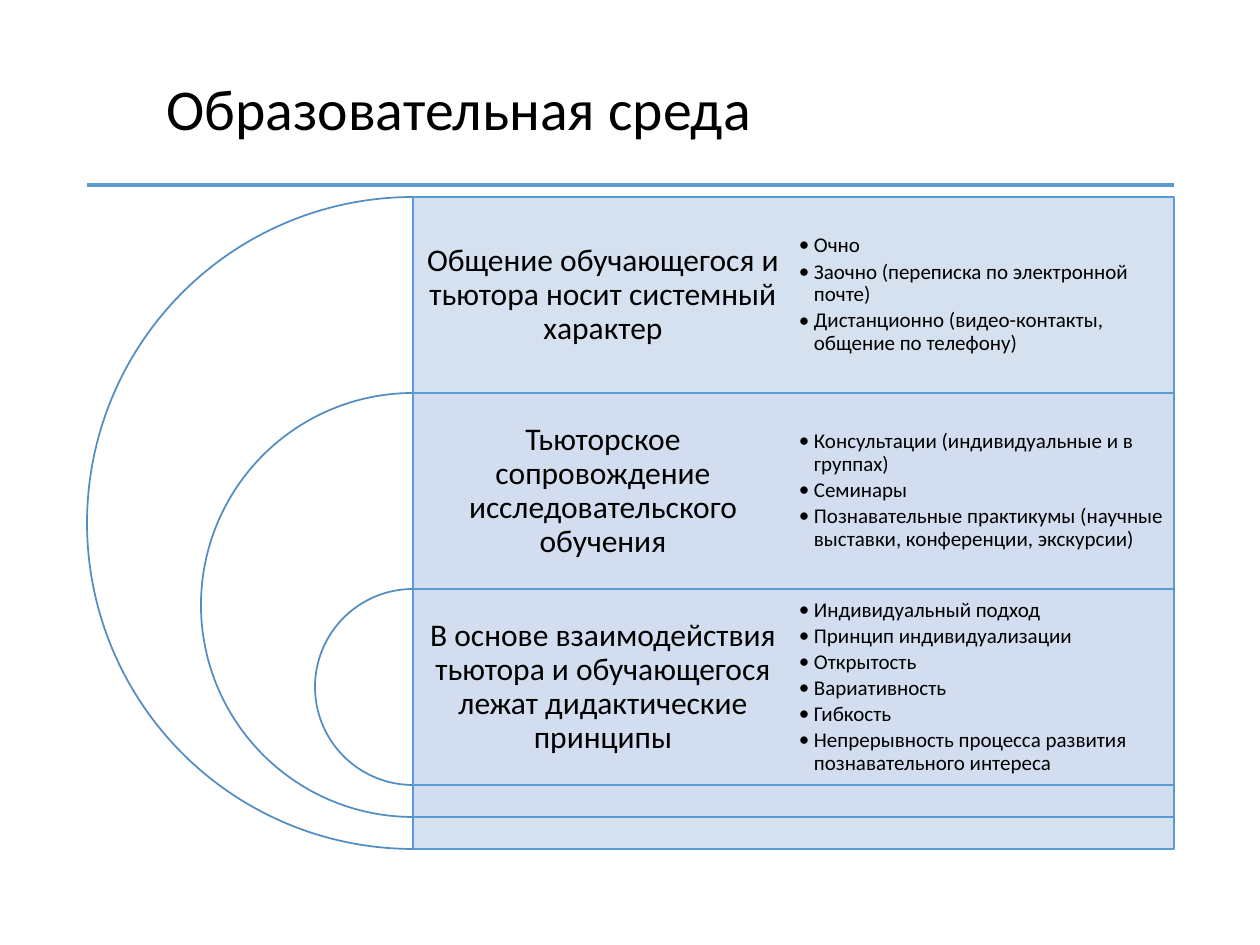
from lxml.etree import SubElement
from pptx import Presentation
from pptx.dml.color import RGBColor
from pptx.enum.shapes import MSO_CONNECTOR, MSO_SHAPE
from pptx.enum.text import MSO_ANCHOR, MSO_AUTO_SIZE, PP_ALIGN
from pptx.oxml.ns import qn
from pptx.util import Pt

PX = 914400 / 126
BLACK = RGBColor(0x00, 0x00, 0x00)
WHITE = RGBColor(0xFF, 0xFF, 0xFF)
BLUE = RGBColor(0x5B, 0x9B, 0xD5)
RIM = RGBColor(0x53, 0x8D, 0xC1)
PALE = RGBColor(0xD2, 0xDE, 0xEF)
FONT = "Calibri"

LEFT, MID, RIGHT = 87, 413, 1174
TOP, ROW = 197, 196
OUTER, SHRINK = 652, 228
HALF = (RIGHT - MID) // 2

BANDS = [
    ("Общение обучающегося и тьютора носит системный характер",
     ["Очно",
      "Заочно (переписка по электронной почте)",
      "Дистанционно (видео-контакты, общение по телефону)"]),
    ("Тьюторское сопровождение исследовательского обучения",
     ["Консультации (индивидуальные и в группах)",
      "Семинары",
      "Познавательные практикумы (научные выставки, конференции, экскурсии)"]),
    ("В основе взаимодействия тьютора и обучающегося лежат дидактические принципы",
     ["Индивидуальный подход",
      "Принцип индивидуализации",
      "Открытость",
      "Вариативность",
      "Гибкость",
      "Непрерывность процесса развития познавательного интереса"]),
]


def px(*nums):
    """Turn pixel lengths into EMU."""
    return [round(num * PX) for num in nums]


def style(par, size, align):
    par.alignment = align
    par.line_spacing = 0.9
    for run in par.runs:
        run.font.size = Pt(size)
        run.font.name = FONT
        run.font.color.rgb = BLACK


def add_title(slide, text):
    title = slide.shapes.title
    title.left, title.top, title.width, title.height = px(154, 50, 1020, 123)
    frame = title.text_frame
    frame.text = text
    frame.auto_size = MSO_AUTO_SIZE.NONE
    frame.vertical_anchor = MSO_ANCHOR.MIDDLE
    style(frame.paragraphs[0], 33, PP_ALIGN.LEFT)


def add_rule(slide, y):
    rule = slide.shapes.add_connector(
        MSO_CONNECTOR.STRAIGHT, *px(LEFT, y, RIGHT, y))
    rule.line.color.rgb = BLUE
    rule.line.width = Pt(2)
    SubElement(rule._element.spPr, qn("a:effectLst"))


def add_form(slide, kind, box, fill, line):
    form = slide.shapes.add_shape(kind, *px(*box))
    form.shadow.inherit = False
    form.fill.solid()
    form.fill.fore_color.rgb = fill
    form.line.color.rgb = line
    form.line.width = Pt(1)
    return form


def add_arc(slide, y, size):
    """Draw the left half of a disc centred on the middle line."""
    arc = add_form(slide, MSO_SHAPE.PIE,
                   (MID - size // 2, y, size, size), WHITE, RIM)
    arc.adjustments[0] = 54
    arc.adjustments[1] = 162


def add_band(slide, y, size):
    band = add_form(slide, MSO_SHAPE.RECTANGLE,
                    (MID, y, RIGHT - MID, size), PALE, BLUE)
    tint = band.fill._xPr.find(".//" + qn("a:srgbClr"))
    SubElement(tint, qn("a:alpha"), val="90000")


def add_text(slide, x, y, inset, lines):
    """Add a box of one cell and return its text frame."""
    frame = slide.shapes.add_textbox(*px(x, y, HALF, ROW)).text_frame
    frame.word_wrap = True
    frame.vertical_anchor = MSO_ANCHOR.MIDDLE
    (frame.margin_left, frame.margin_top,
     frame.margin_right, frame.margin_bottom) = px(*[inset] * 4)
    frame.text = "\n".join(lines)
    return frame


def add_head(slide, y, text):
    frame = add_text(slide, MID, y, 9, [text])
    style(frame.paragraphs[0], 18, PP_ALIGN.CENTER)


def add_list(slide, y, items):
    frame = add_text(slide, MID + HALF, y, 6, items)
    indent, = px(15)
    for par in frame.paragraphs:
        props = par._p.get_or_add_pPr()
        props.set("marL", str(indent))
        props.set("indent", str(-indent))
        SubElement(props, qn("a:buFont"), typeface=FONT)
        SubElement(props, qn("a:buChar"), char="•")
        style(par, 12, PP_ALIGN.LEFT)
        par.space_after = Pt(2)


def main():
    deck = Presentation()
    deck.slide_width, deck.slide_height = px(1260, 945)
    slide = deck.slides.add_slide(deck.slide_layouts[5])
    add_rule(slide, 185)
    add_title(slide, "Образовательная среда")
    for i, (head, items) in enumerate(BANDS):
        y = TOP + i * ROW
        size = OUTER - i * SHRINK
        add_arc(slide, y, size)
        add_band(slide, y, size)
        add_head(slide, y, head)
        add_list(slide, y, items)
    deck.save("out.pptx")


if __name__ == "__main__":
    main()
